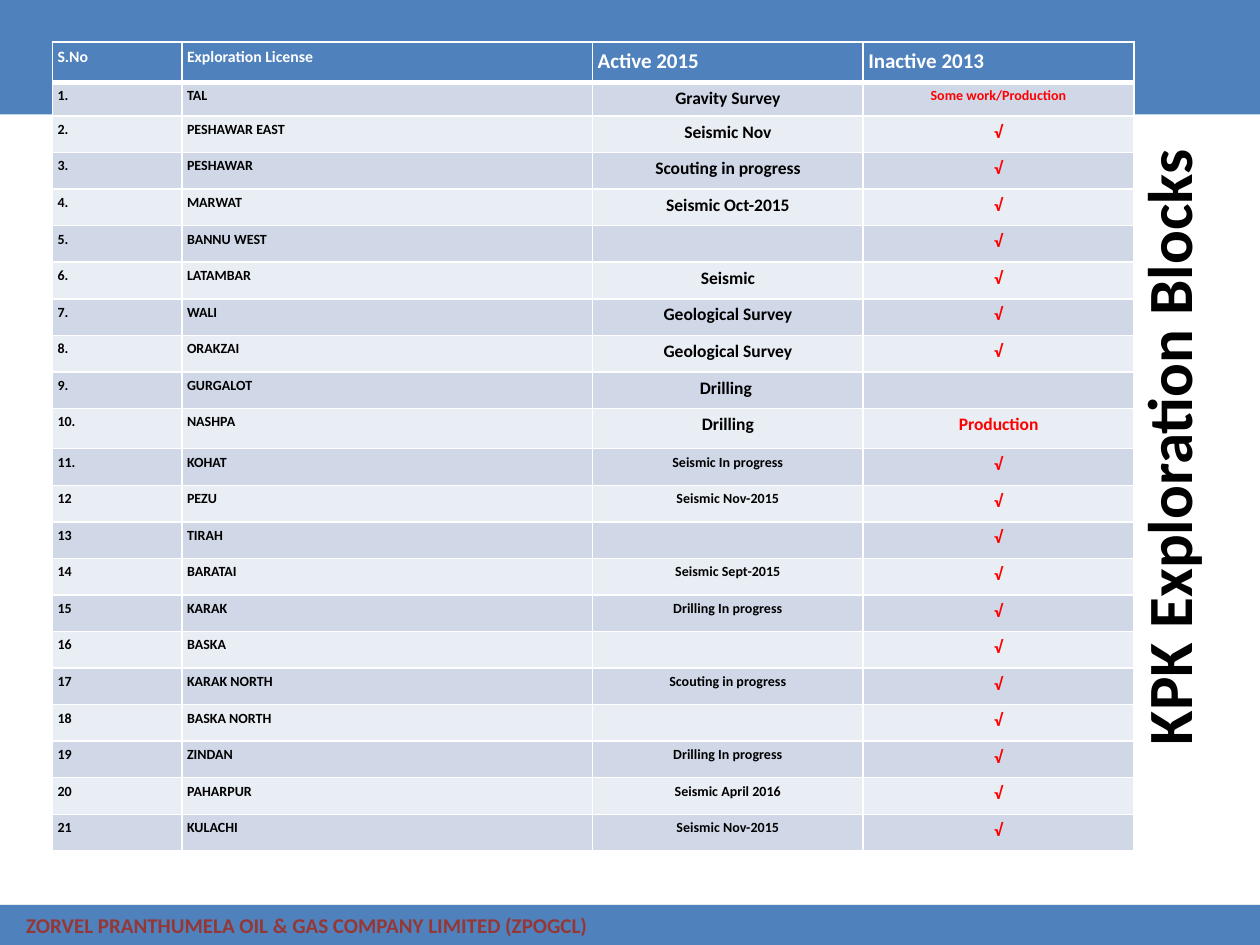
from dataclasses import dataclass

from lxml import etree
from pptx import Presentation
from pptx import util as u
from pptx.dml.color import RGBColor
from pptx.enum import shapes, text
from pptx.oxml.ns import qn

Pt = u.Pt
HUES = {"blue": "4F81BD", "dark": "D0D8E8", "light": "E9EDF4", "white": "FFFFFF",
        "black": "000000", "red": "FF0000", "brick": "953735"}
LEFT = text.PP_ALIGN.LEFT
MID = text.PP_ALIGN.CENTER
TICK = "√"


@dataclass
class Block:
    num: str
    name: str
    active: str
    past: str = TICK
    size: float = 8
    mark: float = 10
    high: float = 20.9


@dataclass
class Band:
    top: float
    high: float


HEAD = ["S.No", "Exploration License", "Active 2015", "Inactive 2013"]
WIDTHS = [74, 234.6, 154.7, 154.7]
BLOCKS = [
    Block("1.", "TAL", "Gravity Survey", "Some work/Production", 10, 8, 19.3),
    Block("2.", "PESHAWAR EAST", "Seismic Nov", size=10),
    Block("3.", "PESHAWAR", "Scouting in progress", size=10),
    Block("4.", "MARWAT", "Seismic Oct-2015", size=10),
    Block("5.", "BANNU WEST", ""),
    Block("6.", "LATAMBAR", "Seismic", size=10),
    Block("7.", "WALI", "Geological Survey", size=10),
    Block("8.", "ORAKZAI", "Geological Survey", size=10),
    Block("9.", "GURGALOT", "Drilling ", "", size=10),
    Block("10.", "NASHPA", "Drilling", "Production", size=10, high=23),
    Block("11.", "KOHAT", "Seismic In progress"),
    Block("12", "PEZU", "Seismic Nov-2015"),
    Block("13", "TIRAH", ""),
    Block("14", "BARATAI", "Seismic Sept-2015"),
    Block("15", "KARAK", "Drilling In progress"),
    Block("16", "BASKA", ""),
    Block("17", "KARAK NORTH", "Scouting in progress"),
    Block("18", "BASKA NORTH", ""),
    Block("19", "ZINDAN", "Drilling In progress"),
    Block("20", "PAHARPUR", "Seismic April 2016"),
    Block("21", "KULACHI", "Seismic Nov-2015"),
]


def hue(name: str) -> RGBColor:
    return RGBColor.from_string(HUES[name])


def style(par, size: float, tint: str, align=LEFT) -> None:
    par.alignment = align
    font = par.font
    font.name, font.size, font.bold = "Calibri", Pt(size), True
    font.color.rgb = hue(tint)


def draw_band(slide, band: Band):
    bar = slide.shapes.add_shape(shapes.MSO_SHAPE.RECTANGLE,
                                 0, Pt(band.top), Pt(720), Pt(band.high))
    bar.shadow.inherit = False
    bar.fill.solid()
    bar.fill.fore_color.rgb = hue("blue")
    bar.line.fill.background()
    return bar


def add_shade(bar) -> None:
    box = bar._element.spPr.find(qn("a:effectLst"))
    shade = etree.SubElement(box, qn("a:outerShdw"), blurRad=str(Pt(3.5)),
                             dist=str(Pt(2.2)), dir="5400000", rotWithShape="0")
    tone = etree.SubElement(shade, qn("a:srgbClr"), val=HUES["black"])
    etree.SubElement(tone, qn("a:alpha"), val="32000")


def add_edges(cell, base: float) -> None:
    props = cell._tc.get_or_add_tcPr()
    for spot, side in enumerate("LRTB"):
        wide = base if side == "B" else 1
        edge = etree.Element(qn(f"a:ln{side}"), w=str(Pt(wide)))
        fill = etree.SubElement(edge, qn("a:solidFill"))
        etree.SubElement(fill, qn("a:srgbClr"), val=HUES["white"])
        props.insert(spot, edge)


def fill_cell(cell, words: str, size: float, tint: str, back: str,
              align=LEFT, base: float = 1) -> None:
    cell.margin_left = cell.margin_right = Pt(2.9)
    cell.margin_top = cell.margin_bottom = Pt(1.4)
    cell.fill.solid()
    cell.fill.fore_color.rgb = hue(back)
    add_edges(cell, base)
    par = cell.text_frame.paragraphs[0]
    par.line_spacing = 1.15
    if words:
        par.text = words
    else:
        etree.SubElement(par._p, qn("a:endParaRPr"), sz=str(int(size * 100)))
    style(par, size, tint, align)


def draw_table(slide) -> None:
    highs = [23] + [block.high for block in BLOCKS]
    grid = slide.shapes.add_table(len(highs), len(WIDTHS), Pt(30), Pt(24),
                                  Pt(sum(WIDTHS)), Pt(sum(highs))).table
    grid.horz_banding = False
    for col, wide in zip(grid.columns, WIDTHS):
        col.width = Pt(wide)
    for row, high in zip(grid.rows, highs):
        row.height = Pt(high)
    for col, words in enumerate(HEAD):
        fill_cell(grid.cell(0, col), words, 9 if col < 2 else 12, "white", "blue", base=3)
    for row, block in enumerate(BLOCKS, 1):
        back = "dark" if row % 2 else "light"
        parts = [(block.num, 8, "black", back), (block.name, 8, "black", back),
                 (block.active, block.size, "black", back, MID),
                 (block.past, block.mark, "red", back, MID)]
        for col, part in enumerate(parts):
            fill_cell(grid.cell(row, col), *part)


def draw_foot(slide) -> None:
    foot = draw_band(slide, Band(517, 23))
    add_shade(foot)
    frame = foot.text_frame
    frame.margin_left = Pt(15)
    frame.margin_top = frame.margin_bottom = 0
    frame.vertical_anchor = text.MSO_ANCHOR.MIDDLE
    par = frame.paragraphs[0]
    par.text = "ZORVEL PRANTHUMELA OIL & GAS COMPANY LIMITED (ZPOGCL)"
    style(par, 12, "brick")


def draw_title(slide) -> None:
    title = slide.shapes.title
    title.left, title.top, title.width, title.height = Pt(424), Pt(242.6), Pt(486), Pt(26)
    title.rotation = 270
    frame = title.text_frame
    frame.word_wrap = True
    frame.auto_size = text.MSO_AUTO_SIZE.NONE
    frame.vertical_anchor = text.MSO_ANCHOR.MIDDLE
    par = frame.paragraphs[0]
    par.text = "KPK Exploration Blocks"
    style(par, 36, "black", MID)
    slide.shapes._spTree.append(title._element)


def main() -> None:
    deck = Presentation()
    deck.slide_width, deck.slide_height = Pt(720), Pt(540)
    slide = deck.slides.add_slide(deck.slide_layouts[5])
    draw_band(slide, Band(-0.5, 66))
    draw_foot(slide)
    draw_title(slide)
    draw_table(slide)
    deck.save("out.pptx")


if __name__ == "__main__":
    main()
